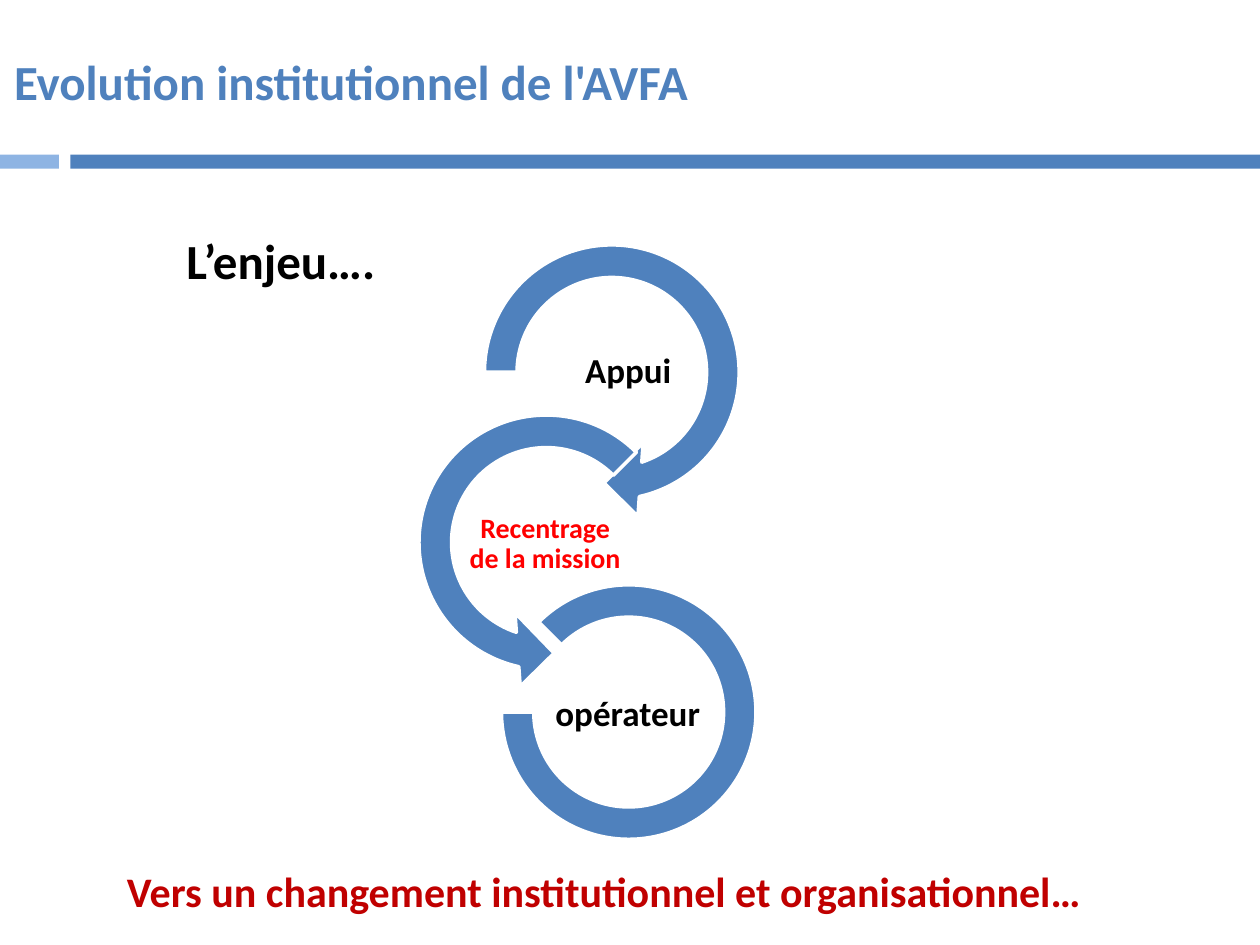
from lxml import etree
from pptx import Presentation
from pptx.dml.color import RGBColor
from pptx.enum import shapes, text
from pptx.oxml.ns import qn
from pptx.util import Cm, Pt

THEME = {
    "font": "Calibri",
    "blue": "4F81BD", "light": "8EB4E3", "white": "FFFFFF",
    "black": "000000", "red": "FF0000", "dark_red": "C00000",
    "heading": 28, "closing": 24, "label": 20, "small": 16,
}
SHAPE = shapes.MSO_SHAPE

# Content; boxes are left, top, width, height in cm
TITLE = "Evolution institutionnel de l'AVFA"
TITLE_BOX = (0.03, 0.33, 22.86, 2.59)
BARS = [("blue", 1.42, 23.98), ("light", 0, 1.19)]
BAR_TOP, BAR_HEIGHT = 3.12, 0.28

# Ring shape, left, top, diameter, adjustments, label, label box, size, colour
STEPS = [
    (SHAPE.CIRCULAR_ARROW, 9.35, 4.52, 5.97, (0.11, 11.42, 45, 108, 0.125),
     "Appui", (11, 6.68, 3.33, 1.65), "label", "black"),
    (SHAPE.LEFT_CIRCULAR_ARROW, 8.03, 7.95, 5.97, (0.11, 11.42, 63, 189, 0.125),
     "Recentrage de la mission", (9.35, 10.13, 3.28, 1.68), "small", "red"),
    (SHAPE.BLOCK_ARC, 10.11, 11.79, 5.13, (135, 108, 0.127),
     "opérateur", (10.46, 13.59, 4.39, 1.65), "label", "black"),
]
CAPTIONS = [
    ("Vers un changement institutionnel et organisationnel…",
     (2.31, 17.32, 20.6, 1.27), "closing", "dark_red"),
    ("L’enjeu….", (3.51, 4.52, 4.37, 1.45), "heading", "black"),
]


def color(name):
    return RGBColor.from_string(THEME[name])


def write(tf, words, size, ink, align=text.PP_ALIGN.LEFT):
    tf.text = words
    p = tf.paragraphs[0]
    p.alignment = align
    font = p.runs[0].font
    font.name, font.size, font.bold = THEME["font"], Pt(THEME[size]), True
    font.color.rgb = color(ink)
    return p


def add_filled(slide, kind, box, fill, line=None):
    sp = slide.shapes.add_shape(kind, *map(Cm, box))
    sp.shadow.inherit = False
    sp.fill.solid()
    sp.fill.fore_color.rgb = color(fill)
    if line:
        sp.line.color.rgb = color(line)
        sp.line.width = Pt(2)
    else:
        sp.line.fill.background()
    return sp


def add_step(slide, kind, left, top, diameter, adjustments, words, box, size, ink):
    ring = add_filled(slide, kind, (left, top, diameter, diameter), "blue", "white")
    for i, value in enumerate(adjustments):
        ring.adjustments[i] = value

    tf = slide.shapes.add_textbox(*map(Cm, box)).text_frame
    tf.word_wrap = True
    tf.vertical_anchor = text.MSO_ANCHOR.MIDDLE
    tf.margin_left = tf.margin_right = tf.margin_top = tf.margin_bottom = Cm(0.03)
    p = write(tf, words, size, ink, text.PP_ALIGN.CENTER)
    p.line_spacing = 0.9
    # Space after as a share of the type size
    after = etree.SubElement(p._p.get_or_add_pPr(), qn("a:spcAft"))
    etree.SubElement(after, qn("a:spcPct")).set("val", "35000")


def main():
    prs = Presentation()
    prs.slide_width, prs.slide_height = Cm(25.4), Cm(19.05)
    slide = prs.slides.add_slide(prs.slide_layouts[5])

    # Title
    title = slide.shapes.title
    title.left, title.top, title.width, title.height = map(Cm, TITLE_BOX)
    title.text_frame.vertical_anchor = text.MSO_ANCHOR.MIDDLE
    write(title.text_frame, TITLE, "heading", "blue")

    # Divider bars
    for fill, left, width in BARS:
        add_filled(slide, SHAPE.RECTANGLE, (left, BAR_TOP, width, BAR_HEIGHT), fill)

    # Chain of rings
    for step in STEPS:
        add_step(slide, *step)

    # Captions
    for words, box, size, ink in CAPTIONS:
        tf = slide.shapes.add_textbox(*map(Cm, box)).text_frame
        tf.word_wrap = False
        tf.auto_size = text.MSO_AUTO_SIZE.SHAPE_TO_FIT_TEXT
        write(tf, words, size, ink)

    prs.save("out.pptx")


if __name__ == "__main__":
    main()
